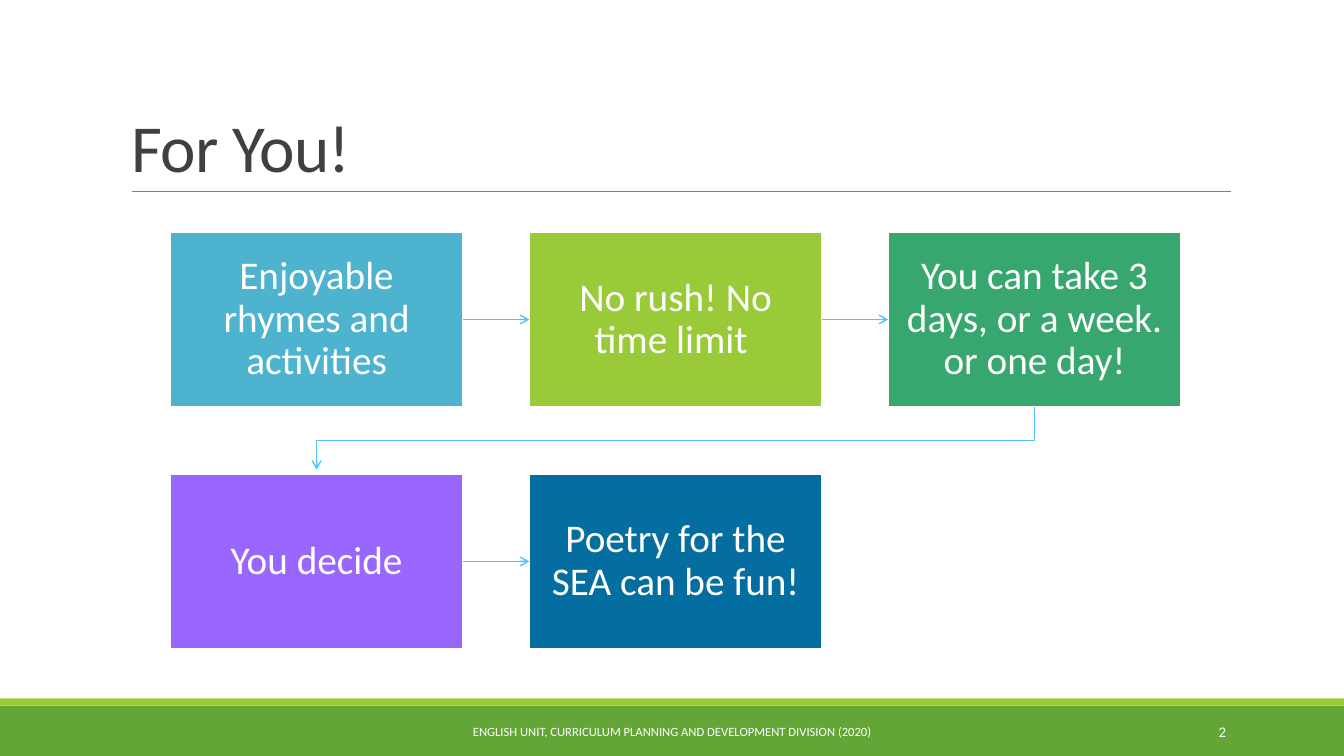
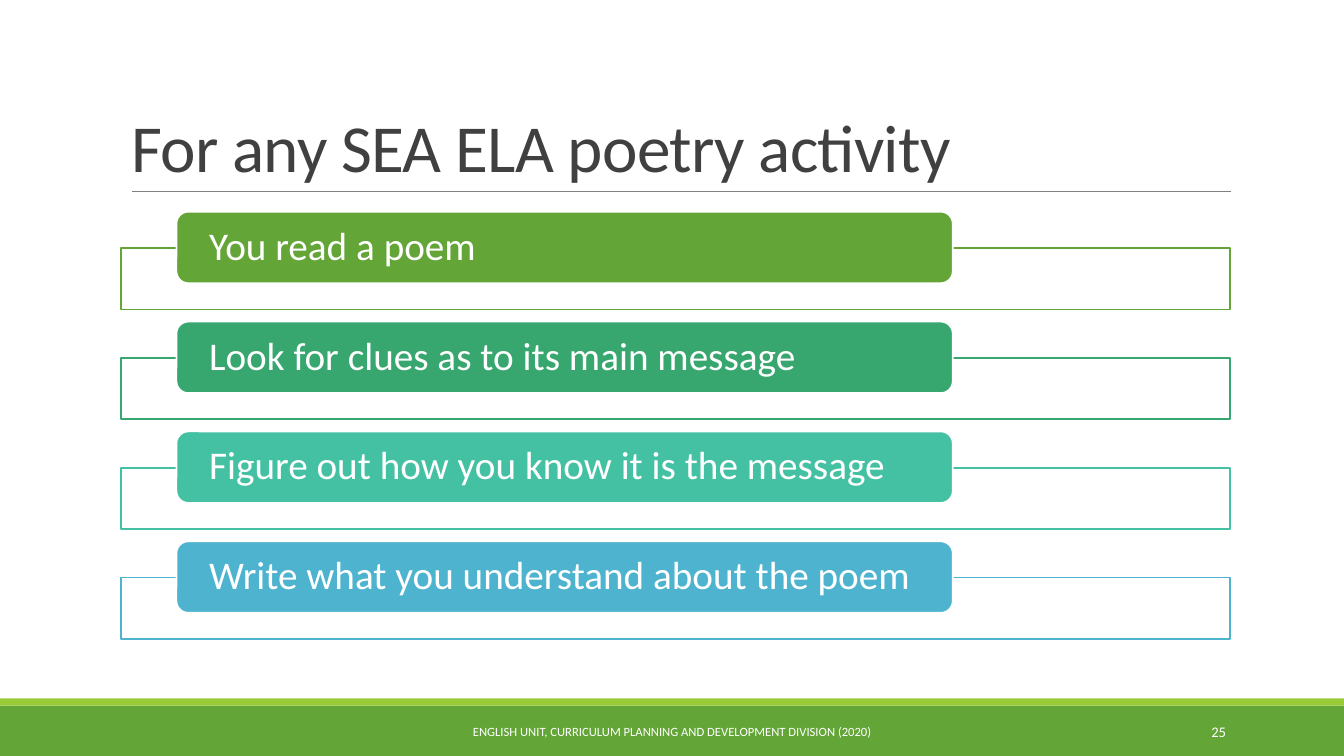
import dataclasses

import lxml.etree
import pptx
import pptx.dml.color
import pptx.enum.shapes
import pptx.enum.text
import pptx.oxml.ns
import pptx.util

Inches = pptx.util.Inches
Pt = pptx.util.Pt
Align = pptx.enum.text.PP_ALIGN
Anchor = pptx.enum.text.MSO_ANCHOR
Preset = pptx.enum.shapes.MSO_SHAPE
qn = pptx.oxml.ns.qn

FONT = "Calibri"
WHITE = "FFFFFF"
GREEN = "63A537"
LIME = "99CB38"
EMERALD = "37A76F"
AQUA = "44C1A3"
BLUE = "4EB3CF"
PURPLE = "9966FF"
NAVY = "056EA0"
ARROW = "51C3F9"
RULE = "808080"
TITLE = "404040"
FOOTER = "ENGLISH UNIT, CURRICULUM PLANNING AND DEVELOPMENT DIVISION (2020)"


@dataclasses.dataclass(frozen=True)
class Area:
    left: float
    top: float
    width: float
    height: float

    def lengths(self) -> tuple:
        return tuple(Inches(value) for value in dataclasses.astuple(self))


@dataclasses.dataclass(frozen=True)
class TextStyle:
    size: float
    color: str = WHITE
    align: Align = Align.LEFT
    anchor: Anchor = Anchor.MIDDLE
    line_spacing: float = 1.0
    insets: tuple = (0.1, 0.05)
    tracking: float = 0


@dataclasses.dataclass(frozen=True)
class Item:
    text: str
    color: str


TITLE_STYLE = TextStyle(48, TITLE, anchor=Anchor.BOTTOM, line_spacing=0.85, tracking=-0.5)
FOOTER_STYLE = TextStyle(9, align=Align.CENTER)
NUMBER_STYLE = TextStyle(10.5, align=Align.RIGHT)
STEP_STYLE = TextStyle(28, align=Align.CENTER, line_spacing=0.9, insets=(0.14, 0.15))
LABEL_STYLE = TextStyle(28, line_spacing=0.9, insets=(0.29, 0))

STEPS = [
    Item("Enjoyable rhymes and activities", BLUE),
    Item("No rush! No time limit ", LIME),
    Item("You can take 3 days, or a week. or one day!", EMERALD),
    Item("You decide", PURPLE),
    Item("Poetry for the SEA can be fun!", NAVY),
]
STEP_COLUMNS = 3
FIRST_STEP = Area(1.69, 2.3, 2.9, 1.74)
STEP_PITCH = (3.56, 2.4)

ACTIVITIES = [
    Item("You read a poem", GREEN),
    Item("Look for clues as to its main message", EMERALD),
    Item("Figure out how you know it is the message", AQUA),
    Item("Write what you understand about the poem", BLUE),
]
FIRST_PANEL = Area(1.2, 2.46, 11, 0.61)
FIRST_LABEL = Area(1.75, 2.1, 7.7, 0.71)
ACTIVITY_PITCH = 1.09


def rgb(color: str) -> pptx.dml.color.RGBColor:
    return pptx.dml.color.RGBColor.from_string(color)


def shifted(area: Area, right: float, down: float) -> Area:
    return dataclasses.replace(area, left=area.left + right, top=area.top + down)


def write(shape, text: str, style: TextStyle) -> None:
    frame = shape.text_frame
    frame.word_wrap = True
    frame.auto_size = pptx.enum.text.MSO_AUTO_SIZE.NONE
    frame.vertical_anchor = style.anchor
    side, edge = (Inches(value) for value in style.insets)
    frame.margin_left = frame.margin_right = side
    frame.margin_top = frame.margin_bottom = edge
    para = frame.paragraphs[0]
    para.alignment = style.align
    para.line_spacing = style.line_spacing
    span = para.add_run()
    span.text = text
    span.font.name = FONT
    span.font.size = Pt(style.size)
    span.font.color.rgb = rgb(style.color)
    if style.tracking:
        span._r.get_or_add_rPr().set("spc", str(int(style.tracking * 100)))


def add_text(page, area: Area, text: str, style: TextStyle) -> None:
    write(page.shapes.add_textbox(*area.lengths()), text, style)


def add_box(page, area: Area, fill: str, outline: str = "", preset: Preset = Preset.RECTANGLE):
    box = page.shapes.add_shape(preset, *area.lengths())
    box.shadow.inherit = False
    box.fill.solid()
    box.fill.fore_color.rgb = rgb(fill)
    if outline:
        box.line.color.rgb = rgb(outline)
        box.line.width = Pt(1.25)
    else:
        box.line.fill.background()
    return box


def set_opacity(box, percent: int) -> None:
    color = box._element.spPr.find(qn("a:solidFill"))[0]
    lxml.etree.SubElement(color, qn("a:alpha")).set("val", str(percent * 1000))


def add_line(page, start: tuple, end: tuple, color: str, width: float):
    points = [Inches(value) for value in (*start, *end)]
    line = page.shapes.add_connector(pptx.enum.shapes.MSO_CONNECTOR.STRAIGHT, *points)
    line.line.color.rgb = rgb(color)
    line.line.width = Pt(width)
    lxml.etree.SubElement(line._element.spPr, qn("a:effectLst"))
    return line


def add_arrowhead(line) -> None:
    lxml.etree.SubElement(line.get_or_add_ln(), qn("a:tailEnd")).set("type", "arrow")


def join_across(page, source, target) -> None:
    arrow = add_line(page, (0, 0), (1, 0), ARROW, 1)
    arrow.begin_connect(source, 3)
    arrow.end_connect(target, 1)
    add_arrowhead(arrow)


def join_rows(page, source: Area, target: Area) -> None:
    start_x = source.left + source.width / 2
    end_x = target.left + target.width / 2
    start_y = source.top + source.height
    end_y = target.top - 0.04
    turn_y = (start_y + target.top) / 2
    corners = [(start_x, turn_y), (end_x, turn_y), (end_x, end_y)]
    builder = page.shapes.build_freeform(Inches(start_x), Inches(start_y))
    builder.add_line_segments([(Inches(x), Inches(y)) for x, y in corners], close=False)
    arrow = builder.convert_to_shape()
    arrow.shadow.inherit = False
    arrow.fill.background()
    arrow.line.color.rgb = rgb(ARROW)
    arrow.line.width = Pt(1)
    add_arrowhead(arrow)


def add_page(deck, title: str, number: int):
    page = deck.slides.add_slide(deck.slide_layouts[5])
    heading = page.shapes.title
    heading.left, heading.top, heading.width, heading.height = Area(1.2, 0.31, 11, 1.59).lengths()
    write(heading, title, TITLE_STYLE)
    add_box(page, Area(0, 7, 13.33, 0.5), GREEN)
    add_box(page, Area(0, 6.93, 13.33, 0.07), LIME)
    add_line(page, (1.31, 1.9), (12.21, 1.9), RULE, 0.5)
    add_text(page, Area(4.03, 7.06, 5.27, 0.4), FOOTER, FOOTER_STYLE)
    add_text(page, Area(10.83, 7.06, 1.43, 0.4), str(number), NUMBER_STYLE)
    return page


def draw_steps(page) -> None:
    areas, boxes = [], []
    for index, step in enumerate(STEPS):
        row, column = divmod(index, STEP_COLUMNS)
        area = shifted(FIRST_STEP, column * STEP_PITCH[0], row * STEP_PITCH[1])
        box = add_box(page, area, step.color, WHITE)
        write(box, step.text, STEP_STYLE)
        areas.append(area)
        boxes.append(box)
    for index in range(1, len(boxes)):
        if index % STEP_COLUMNS:
            join_across(page, boxes[index - 1], boxes[index])
        else:
            join_rows(page, areas[index - 1], areas[index])


def draw_activities(page) -> None:
    for index, activity in enumerate(ACTIVITIES):
        down = index * ACTIVITY_PITCH
        panel = add_box(page, shifted(FIRST_PANEL, 0, down), WHITE, activity.color)
        set_opacity(panel, 90)
        label = add_box(
            page, shifted(FIRST_LABEL, 0, down), activity.color, WHITE, Preset.ROUNDED_RECTANGLE
        )
        write(label, activity.text, LABEL_STYLE)


def main() -> None:
    deck = pptx.Presentation()
    deck.slide_width = Inches(13.33)
    deck.slide_height = Inches(7.5)
    draw_steps(add_page(deck, "For You!", 2))
    draw_activities(add_page(deck, "For any SEA ELA poetry activity", 25))
    deck.save("out.pptx")


if __name__ == "__main__":
    main()
